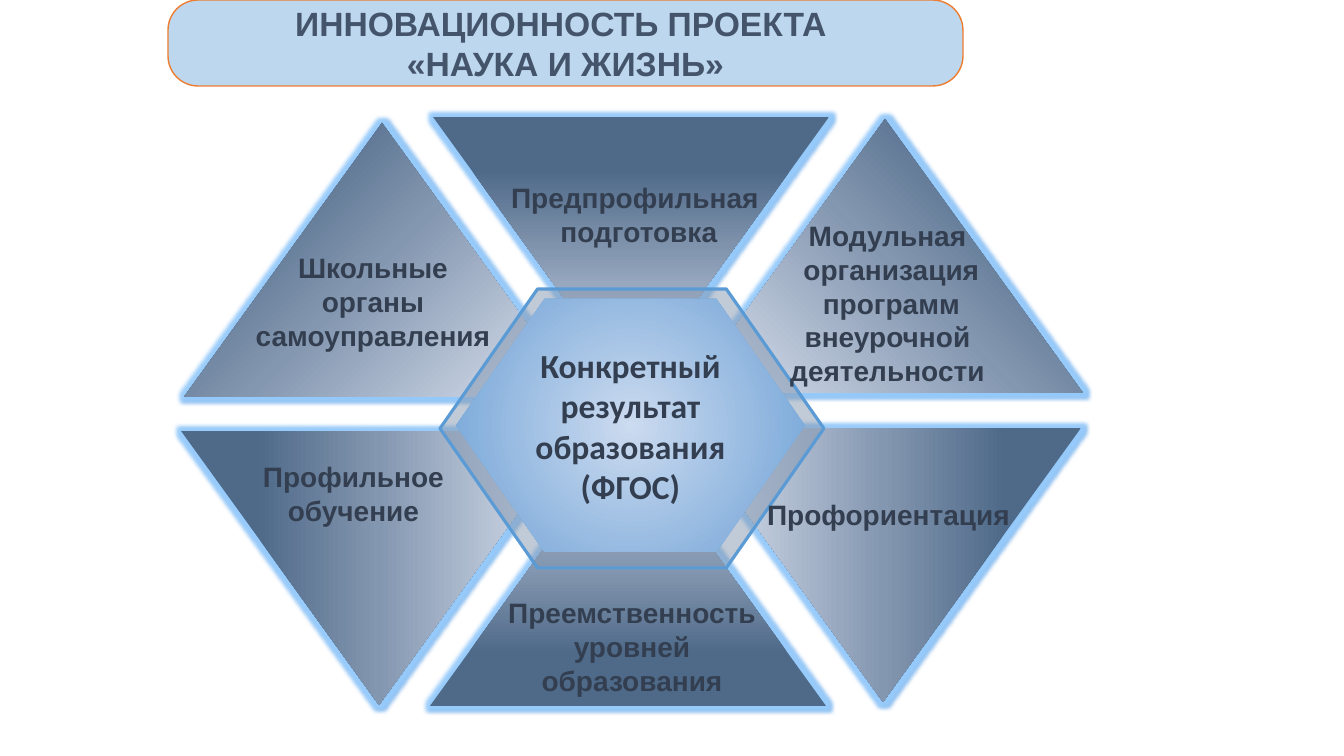
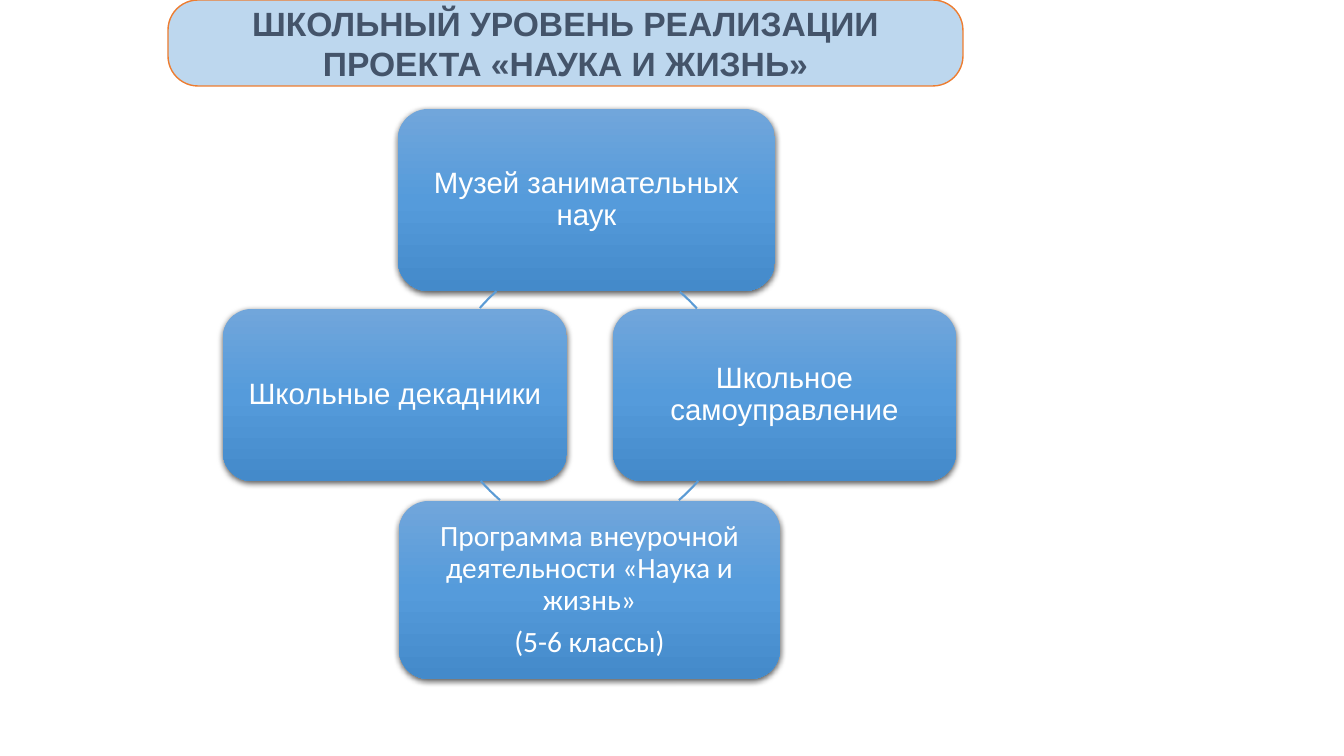
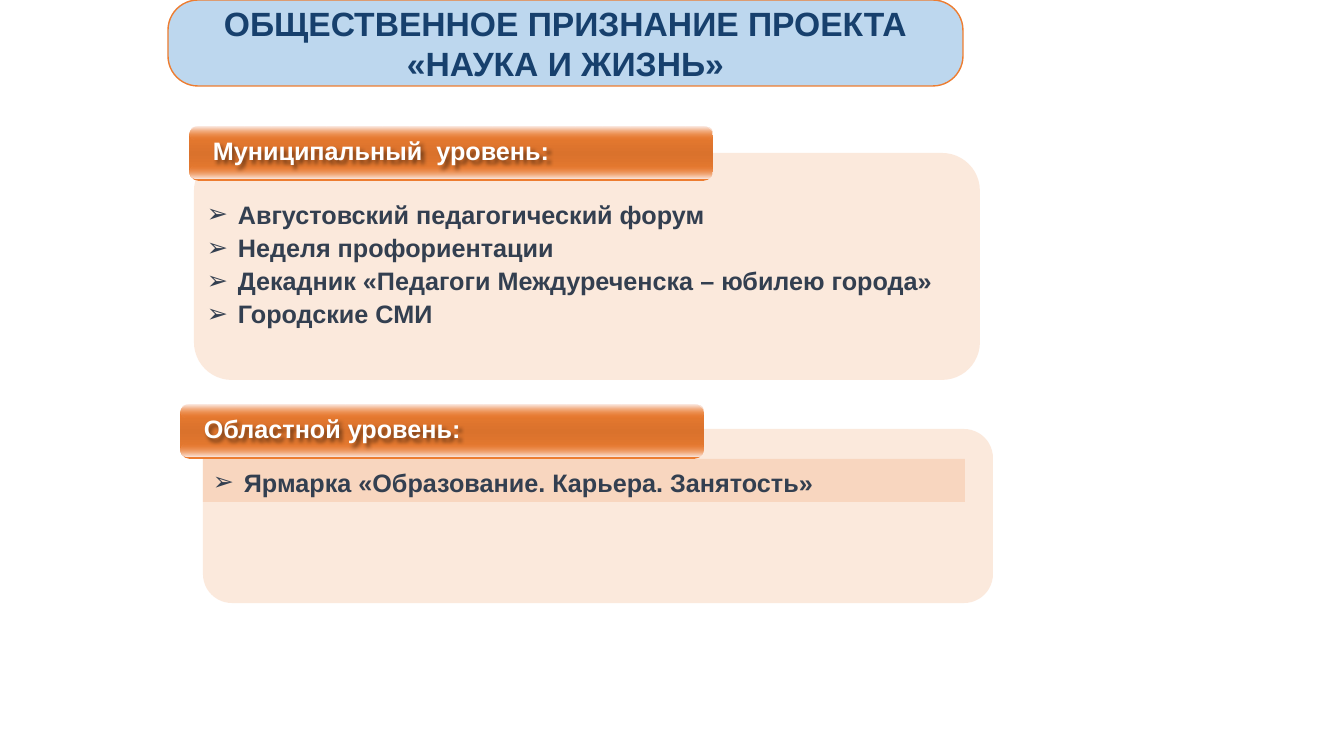
import pptx
import pptx.dml.color
import pptx.enum.shapes
import pptx.enum.text
import pptx.oxml
import pptx.oxml.ns
import pptx.util

PX = 9071.43  # EMU per px
SHAPES = pptx.enum.shapes.MSO_SHAPE
ANCHORS = pptx.enum.text.MSO_ANCHOR
ALIGN = pptx.enum.text.PP_ALIGN

# Shared look
NAVY, INK, WHITE = "44546A", "333F50", "FFFFFF"
BLUE, SKY, ORANGE = "5B9BD5", "BDD7EE", "ED7D31"
TITLE_BOX = (168, 0, 795, 86)

# Slide 1: wheel of six triangles around a hexagon
INNOVATION_TITLE = "ИННОВАЦИОННОСТЬ ПРОЕКТА \v«НАУКА И ЖИЗНЬ»"
SECTOR_SIZE = (396, 274)
SECTORS = [  # left, top, points down, gradient angle
    (687, 119, False, 135), (181, 431, True, 0), (685, 428, True, 180),
    (430, 432, False, 270), (433, 117, True, 270), (184, 123, False, 45),
]
SECTOR_STOPS = [(0, "4E6A88", 100), (20, "506B8A", 100),
                (50, "8497B0", 100), (100, "E0E7F4", 100)]
CORE_STOPS = [(0, "CCDBEF", 100), (88, "7AA9DA", 100), (100, "7AA9DA", 100)]
CORE_TEXT = "Конкретный результат образования (ФГОС)"
SECTOR_LABELS = [
    ("Школьные органы самоуправления", (234, 246, 278, 112)),
    ("Предпрофильная\n подготовка", (464, 176, 342, 78)),
    ("Модульная\n организация\n программ внеурочной деятельности",
     (734, 214, 307, 179)),
    ("Преемственность уровней образования", (489, 591, 286, 112)),
    ("Профориентация", (750, 493, 277, 44)),
    ("Профильное обучение", (195, 455, 317, 78)),
]

# Slide 2: cycle of four cards
SCHOOL_TITLE = "ШКОЛЬНЫЙ УРОВЕНЬ РЕАЛИЗАЦИИ ПРОЕКТА «НАУКА И ЖИЗНЬ»"
CARDS = [
    ("Музей занимательных наук", "Arial", (398, 109, 377, 182)),
    ("Школьное самоуправление", "Arial", (613, 309, 343, 172)),
    ("Программа внеурочной деятельности «Наука и жизнь»\n(5-6 классы)",
     "Calibri", (399, 501, 381, 178)),
    ("Школьные декадники", "Arial", (223, 309, 344, 172)),
]
CARD_STOPS = [(0, "71A6DB", 100), (50, "559BDB", 100), (100, "448ACA", 100)]
RING = 390  # diameter of the circle each link is cut from
LINKS = [  # left and top of the circle, start and end angle
    (357, 244, 311, 318), (356, 158, 41, 49),
    (433, 158, 131, 139), (432, 241, 221, 228),
]

# Slide 3: recognition by level
RECOGNITION_TITLE = "ОБЩЕСТВЕННОЕ ПРИЗНАНИЕ ПРОЕКТА\v«НАУКА И ЖИЗНЬ»"
LEVELS = [
    {"name": "Муниципальный  уровень:", "tab": (189, 126),
     "panel": (194, 153, 786, 227), "list": (197, 191, 771, 144), "shaded": False,
     "items": ["Августовский педагогический форум", "Неделя профориентации",
               "Декадник «Педагоги Междуреченска – юбилею города»",
               "Городские СМИ"]},
    {"name": "Областной уровень:", "tab": (180, 404),
     "panel": (203, 429, 790, 174), "list": (203, 459, 762, 43), "shaded": True,
     "items": ["Ярмарка «Образование. Карьера. Занятость»"]},
]
TAB_STOPS = [(0, ORANGE, 100), (50, "DA722C", 100), (100, ORANGE, 100)]
GLOSS = [  # offset from the tab's top, stops
    (40, [(0, ORANGE, 0), (100, "FCEDE9", 100)]),
    (1, [(0, "FCF0ED", 100), (100, ORANGE, 0)]),
]


def px(value):
    return pptx.util.Emu(round(value * PX))


def rgb(code):
    return pptx.dml.color.RGBColor.from_string(code)


def xml(body):
    """Build one DrawingML element; a space must follow its tag name."""
    tag, rest = body[1:].split(" ", 1)
    return pptx.oxml.parse_xml(f"<{tag} {pptx.oxml.ns.nsdecls('a')} {rest}")


def color_xml(code, alpha):
    return f'<a:srgbClr val="{code}"><a:alpha val="{alpha * 1000}"/></a:srgbClr>'


def add_shape(slide, kind, box, fill=None, line=None, width=1, alpha=100, adj=()):
    shape = slide.shapes.add_shape(kind, *map(px, box))
    shape.shadow.inherit = False
    if fill:
        shape.fill.solid()
        shape.fill.fore_color.rgb = rgb(fill)
        if alpha < 100:
            solid = shape.element.spPr.find(pptx.oxml.ns.qn("a:solidFill"))
            solid[0].append(xml(f'<a:alpha val="{alpha * 1000}"/>'))
    else:
        shape.fill.background()
    if line:
        shape.line.color.rgb = rgb(line)
        shape.line.width = pptx.util.Pt(width)
    else:
        shape.line.fill.background()
    for index, value in enumerate(adj):
        shape.adjustments[index] = value
    return shape


def set_gradient(shape, stops, angle=None):
    """Linear gradient at the angle, or one from the centre without it."""
    if angle is None:
        way = ('<a:path path="circle"><a:fillToRect l="50000" t="50000" '
               'r="50000" b="50000"/></a:path>')
    else:
        way = f'<a:lin ang="{angle * 60000}" scaled="0"/>'
    marks = "".join(f'<a:gs pos="{pos * 1000}">{color_xml(code, alpha)}</a:gs>'
                    for pos, code, alpha in stops)
    gradient = xml(f'<a:gradFill rotWithShape="1"><a:gsLst>{marks}</a:gsLst>{way}</a:gradFill>')
    properties = shape.element.spPr
    properties.replace(properties.find(pptx.oxml.ns.qn("a:noFill")), gradient)


def add_effect(shape, body):
    shape.element.spPr.find(pptx.oxml.ns.qn("a:effectLst")).append(xml(body))


def drop_shadow(blur, distance, angle, code, alpha):
    return (f'<a:outerShdw blurRad="{round(blur * 12700)}" dist="{round(distance * 12700)}" '
            f'dir="{angle * 60000}" algn="ctr" rotWithShape="0">'
            f'{color_xml(code, alpha)}</a:outerShdw>')


def write(shape, text, size, color, font="Arial", bold=True, align=ALIGN.CENTER,
          anchor=ANCHORS.TOP, spacing=None, after=None):
    frame = shape.text_frame
    frame.word_wrap = True
    frame.vertical_anchor = anchor
    frame.text = text
    for paragraph in frame.paragraphs:
        paragraph.alignment = align
        paragraph.font.name = font
        paragraph.font.size = pptx.util.Pt(size)
        paragraph.font.bold = bold
        paragraph.font.color.rgb = rgb(color)
        if spacing:
            paragraph.line_spacing = spacing
        if after:
            paragraph.space_after = pptx.util.Pt(after)
    return frame


def add_text(slide, box, text, size, color, **style):
    label = slide.shapes.add_textbox(*map(px, box))
    write(label, text, size, color, **style)
    return label


def add_slide(deck, title, color=NAVY):
    slide = deck.slides.add_slide(deck.slide_layouts[6])
    banner = add_shape(slide, SHAPES.ROUNDED_RECTANGLE, TITLE_BOX, SKY, ORANGE, adj=[0.35])
    write(banner, title, 24, color, anchor=ANCHORS.MIDDLE)
    return slide


def build_innovation(deck):
    slide = add_slide(deck, INNOVATION_TITLE)
    for left, top, down, angle in SECTORS:
        sector = add_shape(slide, SHAPES.ISOSCELES_TRIANGLE, (left, top, *SECTOR_SIZE))
        set_gradient(sector, SECTOR_STOPS, angle)
        add_effect(sector, f'<a:glow rad="76200">{color_xml("9CD0FF", 85)}</a:glow>')
        add_effect(sector, drop_shadow(0, 1.5, 45, "69A5E3", 100))
        if down:
            sector.element.spPr.xfrm.set("flipV", "1")
    add_shape(slide, SHAPES.HEXAGON, (440, 289, 384, 279), "8497B0", BLUE, 2.25, 50, [0.35])
    core = add_shape(slide, SHAPES.HEXAGON, (456, 299, 349, 253), adj=[0.35])
    set_gradient(core, CORE_STOPS)
    write(core, CORE_TEXT, 24, INK, font="Calibri", anchor=ANCHORS.MIDDLE)
    for text, box in SECTOR_LABELS:
        add_text(slide, box, text, 20, INK)


def build_school(deck):
    slide = add_slide(deck, SCHOOL_TITLE)
    for text, font, box in CARDS:
        card = add_shape(slide, SHAPES.ROUNDED_RECTANGLE, box)
        set_gradient(card, CARD_STOPS, 90)
        add_effect(card, drop_shadow(4.5, 1.5, 90, "000000", 63))
        frame = write(card, text, 21, WHITE, font=font, bold=False,
                      anchor=ANCHORS.MIDDLE, spacing=0.9, after=7)
        frame.margin_left = frame.margin_right = px(9)
        frame.margin_top = frame.margin_bottom = px(9)
    for left, top, *angles in LINKS:
        # An arc's adjustment of 0.6 is one degree
        add_shape(slide, SHAPES.ARC, (left, top, RING, RING), line=BLUE, width=1.5,
                  adj=[angle * 0.6 for angle in angles])


def add_tab(slide, left, top, name):
    tab = add_shape(slide, SHAPES.ROUNDED_RECTANGLE, (left, top, 524, 55), adj=[0.18])
    set_gradient(tab, TAB_STOPS, 90)
    for offset, stops in GLOSS:
        gloss = add_shape(slide, SHAPES.ROUNDED_RECTANGLE,
                          (left + 1, top + offset, 522, 13), adj=[0.5])
        set_gradient(gloss, stops, 90)
    heading = add_text(slide, (left + 14, top + 4, 500, 40), name, 18, WHITE,
                       align=ALIGN.LEFT)
    heading.shadow.inherit = False
    add_effect(heading, drop_shadow(3, 3, 45, "000000", 45))


def build_recognition(deck):
    slide = add_slide(deck, RECOGNITION_TITLE, "17406D")
    for level in LEVELS:
        add_shape(slide, SHAPES.ROUNDED_RECTANGLE, level["panel"], ORANGE, alpha=17)
        if level["shaded"]:
            add_shape(slide, SHAPES.RECTANGLE, level["list"], ORANGE, alpha=17)
        items = add_text(slide, level["list"], "\n".join(level["items"]), 18, INK,
                         align=ALIGN.LEFT, spacing=1.1)
        for paragraph in items.text_frame.paragraphs:
            properties = paragraph._p.get_or_add_pPr()
            properties.set("marL", str(px(31)))
            properties.set("indent", str(-px(31)))
            defaults = properties.find(pptx.oxml.ns.qn("a:defRPr"))
            defaults.addprevious(xml('<a:buFont typeface="Arial"/>'))
            defaults.addprevious(xml('<a:buChar char="➢"/>'))
        add_tab(slide, *level["tab"], level["name"])


def main():
    deck = pptx.Presentation()
    deck.slide_width, deck.slide_height = px(1344), px(756)
    build_innovation(deck)
    build_school(deck)
    build_recognition(deck)
    deck.save("out.pptx")


if __name__ == "__main__":
    main()
